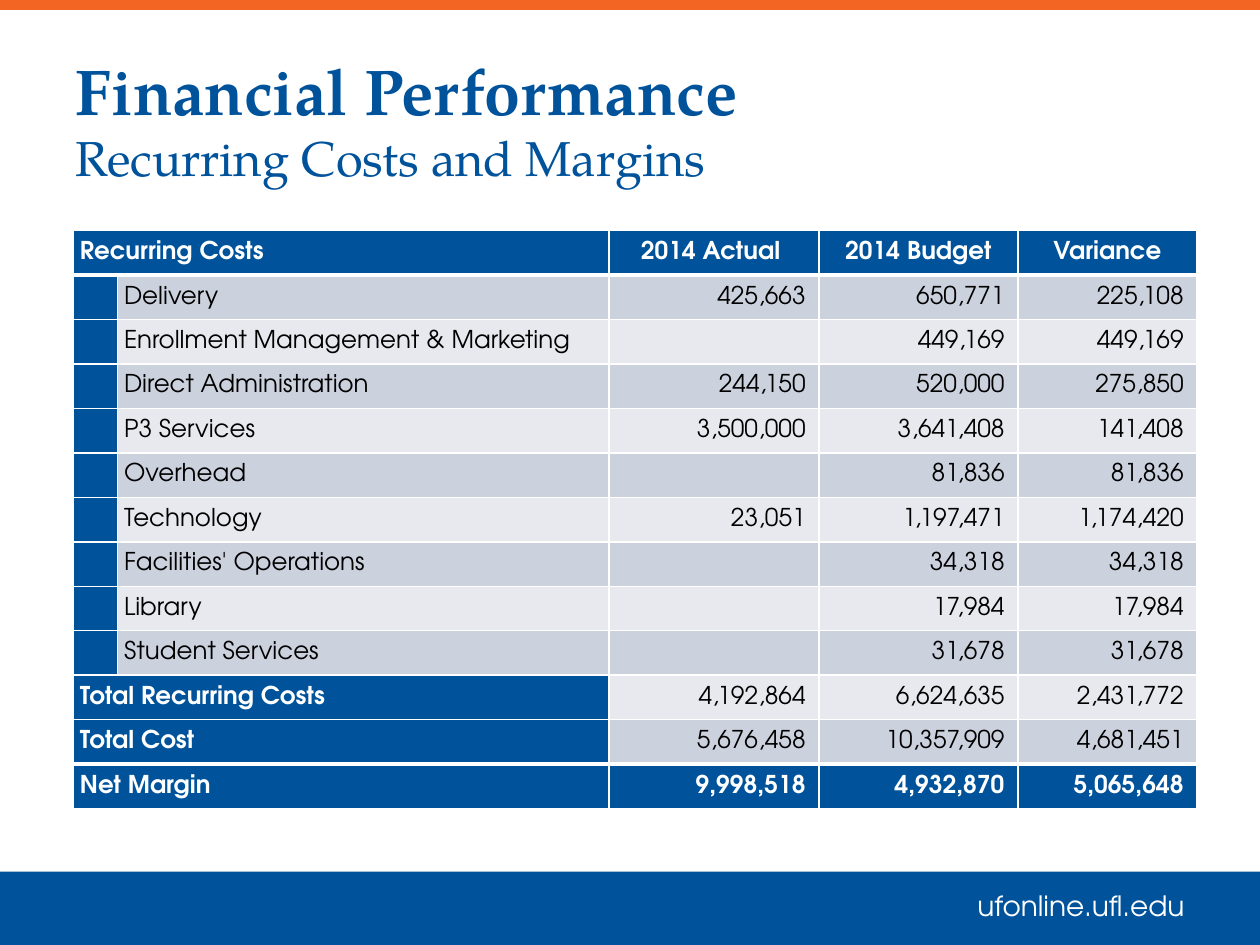
from dataclasses import dataclass

from lxml.etree import SubElement
from pptx import Presentation
from pptx.dml.color import RGBColor as Rgb
from pptx.enum.shapes import MSO_SHAPE as Shape
from pptx.enum.text import MSO_ANCHOR as Anchor, MSO_AUTO_SIZE as AutoSize, PP_ALIGN as Align
from pptx.oxml.ns import qn
from pptx.util import Cm, Pt


@dataclass(frozen=True)
class Theme:
    blue: str = "00539B"
    orange: str = "F26522"
    white: str = "FFFFFF"
    black: str = "000000"
    bands: tuple = ("CCD1DE", "E7E9EF")
    serif: str = "TeX Gyre Pagella"
    sans: str = "TeX Gyre Adventor"
    title_size: float = 36.9
    subtitle_size: float = 27.9
    footer_size: float = 16
    table_size: float = 14
    thin_line: float = 1
    thick_line: float = 3


HEADER = ("Recurring Costs", "2014 Actual ", "2014 Budget", "Variance")
COSTS = [
    ("Delivery", 425663, 650771, 225108),
    ("Enrollment Management & Marketing", None, 449169, 449169),
    ("Direct Administration", 244150, 520000, 275850),
    ("P3 Services", 3500000, 3641408, 141408),
    ("Overhead", None, 81836, 81836),
    ("Technology", 23051, 1197471, 1174420),
    ("Facilities' Operations", None, 34318, 34318),
    ("Library", None, 17984, 17984),
    ("Student Services", None, 31678, 31678),
]
TOTALS = [
    ("Total Recurring Costs", 4192864, 6624635, 2431772),
    ("Total Cost", 5676458, 10357909, 4681451),
]
MARGIN = ("Net Margin", 9998518, 4932870, 5065648)


def add_text(para, text, *, font, size, color, bold=False, align=Align.LEFT):
    """Append one formatted span of text to a paragraph."""
    para.alignment = align
    span = para.add_run()
    span.text = text
    span.font.name = font
    span.font.size = Pt(size)
    span.font.bold = bold
    span.font.color.rgb = Rgb.from_string(color)


def amount(value):
    return "" if value is None else f"{value:,} "


class SlideBuilder:
    def __init__(self, page, theme):
        self.page = page
        self.theme = theme

    def title(self, heading, subheading, left, top, width, height):
        theme = self.theme
        box = self.page.shapes.title
        box.left, box.top, box.width, box.height = map(Cm, (left, top, width, height))
        frame = box.text_frame
        frame.vertical_anchor = Anchor.MIDDLE
        para = frame.paragraphs[0]
        style = {"font": theme.serif, "color": theme.blue}
        add_text(para, heading, size=theme.title_size, bold=True, **style)
        para.add_line_break()
        add_text(para, subheading, size=theme.subtitle_size, **style)

    def bar(self, color, left, top, width, height):
        bar = self.page.shapes.add_shape(Shape.RECTANGLE, *map(Cm, (left, top, width, height)))
        bar.shadow.inherit = False
        bar.fill.solid()
        bar.fill.fore_color.rgb = Rgb.from_string(color)
        bar.line.fill.background()

    def footer(self, text, left, top, width, height):
        theme = self.theme
        box = self.page.shapes.add_textbox(*map(Cm, (left, top, width, height)))
        frame = box.text_frame
        frame.word_wrap = True
        frame.auto_size = AutoSize.SHAPE_TO_FIT_TEXT
        add_text(frame.paragraphs[0], text, font=theme.sans, size=theme.footer_size,
                 color=theme.white, align=Align.RIGHT)

    def borders(self, cell, thick_side=None):
        properties = cell._tc.get_or_add_tcPr()
        for side in ("L", "R", "T", "B"):
            points = self.theme.thick_line if side == thick_side else self.theme.thin_line
            line = SubElement(properties, qn(f"a:ln{side}"), w=str(Pt(points)))
            fill = SubElement(line, qn("a:solidFill"))
            SubElement(fill, qn("a:srgbClr"), val=self.theme.white)

    def cell(self, cell, text, fill, *, color, bold=False, align=Align.LEFT, thick_side=None):
        theme = self.theme
        cell.vertical_anchor = Anchor.MIDDLE
        cell.margin_left = cell.margin_right = Cm(0.13)
        cell.margin_top = cell.margin_bottom = Cm(0.13)
        self.borders(cell, thick_side)
        cell.fill.solid()
        cell.fill.fore_color.rgb = Rgb.from_string(fill)
        para = cell.text_frame.paragraphs[0]
        if text:
            add_text(para, text, font=theme.sans, size=theme.table_size,
                     color=color, bold=bold, align=align)
        else:
            # An empty cell keeps the table's type size, so its row does not grow
            SubElement(para._p, qn("a:endParaRPr"), sz=str(theme.table_size * 100))

    def table(self, left, top, column_widths, height):
        theme = self.theme
        row_count = len(COSTS) + len(TOTALS) + 2
        frame = self.page.shapes.add_table(row_count, len(column_widths), Cm(left), Cm(top),
                                           Cm(sum(column_widths)), Cm(height))
        grid = frame.table
        for column, width in zip(grid.columns, column_widths):
            column.width = Cm(width)
        for row in grid.rows:
            row.height = Cm(height / row_count)

        strong = {"color": theme.white, "bold": True}
        last = row_count - 1
        body = [*COSTS, *TOTALS]

        # Header and net margin rows
        for index, texts, align, side in (
            (0, HEADER, Align.CENTER, "B"),
            (last, (MARGIN[0], *map(amount, MARGIN[1:])), Align.RIGHT, "T"),
        ):
            self.wide_label(grid, index, texts[0], strong, side)
            for column, text in enumerate(texts[1:], 2):
                self.cell(grid.cell(index, column), text, theme.blue,
                          align=align, thick_side=side, **strong)

        # Banded cost and total rows
        for index, (label, *values) in enumerate(body, 1):
            band = theme.bands[(index - 1) % 2]
            if index <= len(COSTS):
                self.cell(grid.cell(index, 0), "", theme.blue, color=theme.white)
                self.cell(grid.cell(index, 1), label, band, color=theme.black)
            else:
                self.wide_label(grid, index, label, strong)
            for column, value in enumerate(values, 2):
                self.cell(grid.cell(index, column), amount(value), band,
                          color=theme.black, align=Align.RIGHT)

    def wide_label(self, grid, index, text, style, thick_side=None):
        first, second = grid.cell(index, 0), grid.cell(index, 1)
        first.merge(second)
        self.cell(first, text, self.theme.blue, thick_side=thick_side, **style)
        self.cell(second, "", self.theme.blue, thick_side=thick_side, **style)


def main():
    deck = Presentation()
    deck.slide_width, deck.slide_height = Cm(25.4), Cm(19.05)
    theme = Theme()
    page = deck.slides.add_slide(deck.slide_layouts[5])
    builder = SlideBuilder(page, theme)

    # Top and bottom bars with the web address
    builder.bar(theme.orange, 0, 0, 25.4, 0.2)
    builder.bar(theme.blue, 0, 17.57, 25.4, 1.48)
    builder.footer("ufonline.ufl.edu", 19.05, 17.78, 5.08, 0.94)

    # Cost table
    builder.table(1.48, 4.65, (0.89, 9.91, 4.23, 4.01, 3.61), 11.66)

    # Title
    builder.title("Financial Performance", "Recurring Costs and Margins", 1.27, 0.84, 22.86, 3.1)

    deck.save("out.pptx")


if __name__ == "__main__":
    main()
